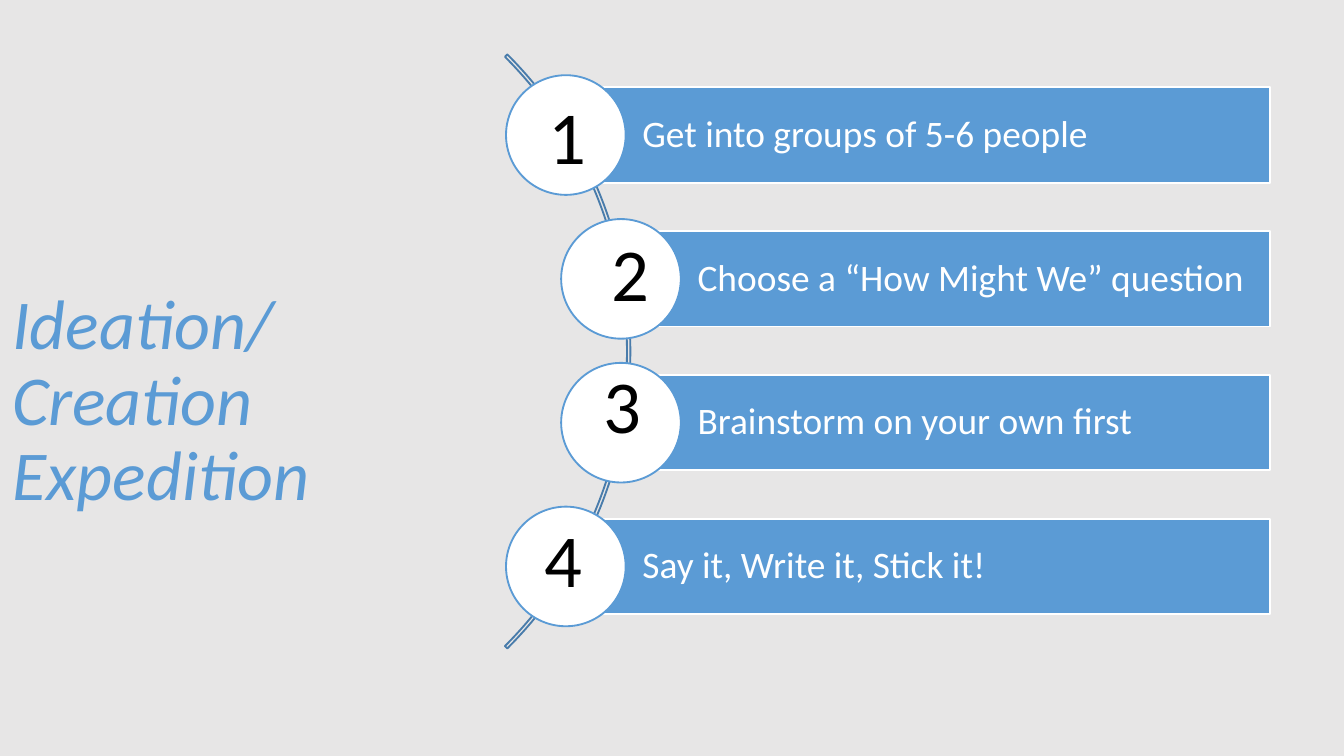
from pptx import Presentation
from pptx.dml.color import RGBColor
from pptx.enum.shapes import MSO_SHAPE as SHAPE
from pptx.enum.text import MSO_ANCHOR as ANCHOR, MSO_AUTO_SIZE as AUTO, PP_ALIGN as ALIGN
from pptx.util import Inches, Pt

COLORS = {"ground": "E7E6E6", "blue": "5B9BD5", "arc": "497CAB",
          "white": "FFFFFF", "black": "000000"}


def write(box, text, size, color, italic=False, anchor=ANCHOR.TOP,
          spacing=1.0, left=0.1, inset=0.05, wrap=True):
    frame = box.text_frame
    frame.auto_size = AUTO.NONE
    frame.word_wrap = wrap
    frame.vertical_anchor = anchor
    frame.margin_left, frame.margin_right = Inches(left), Inches(min(left, inset * 2))
    frame.margin_top = frame.margin_bottom = Inches(inset)
    paragraph = frame.paragraphs[0]
    paragraph.text = text
    paragraph.alignment = ALIGN.LEFT
    paragraph.line_spacing = spacing
    for run in paragraph.runs:
        run.font.name = "Calibri"
        run.font.size = Pt(size)
        run.font.italic = italic
        run.font.color.rgb = RGBColor.from_string(COLORS[color])


def draw(kind, left, top, width, height, fill, line):
    outline = slide.shapes.add_shape(
        kind, Inches(left), Inches(top), Inches(width), Inches(height))
    outline.shadow.inherit = False
    if fill:
        outline.fill.solid()
        outline.fill.fore_color.rgb = RGBColor.from_string(COLORS[fill])
    else:
        outline.fill.background()
    outline.line.color.rgb = RGBColor.from_string(COLORS[line])
    outline.line.width = Pt(1)
    return outline


deck = Presentation()
deck.slide_width = Inches(10)
deck.slide_height = deck.slide_width * 9 // 16
slide = deck.slides.add_slide(deck.slide_layouts[5])
slide.background.fill.solid()
slide.background.fill.fore_color.rgb = RGBColor.from_string(COLORS["ground"])

heading = slide.shapes.title
heading.left, heading.top = Inches(-0.01), Inches(2.1)
heading.width, heading.height = Inches(3.86), Inches(1.3)
write(heading, "Ideation/Creation\vExpedition", 37.5, "blue", italic=True, spacing=0.9)

arc = draw(SHAPE.BLOCK_ARC, -1.56, -0.51, 6.25, 6.25, None, "arc")
for index, setting in enumerate((189, 27, 0.004)):
    arc.adjustments[index] = setting

ROW_TOP, ROW_STEP, BAR_HEIGHT, BAR_RIGHT = 0.65, 1.07, 0.71, 9.45
CIRCLE = 0.89
steps = [
    ("Get into groups of 5-6 people", 4.21, 3.98, 0.62),
    ("Choose a “How Might We” question", 4.62, 4.45, 1.64),
    ("Brainstorm on your own first", 4.62, 4.39, 2.62),
    ("Say it, Write it, Stick it!", 4.21, 3.95, 3.77),
]
for row, (step, bar_left, number_left, number_top) in enumerate(steps):
    bar_top = ROW_TOP + row * ROW_STEP
    bar = draw(SHAPE.RECTANGLE, bar_left, bar_top, BAR_RIGHT - bar_left, BAR_HEIGHT,
               "blue", "white")
    write(bar, step, 20, "white", anchor=ANCHOR.MIDDLE, spacing=0.9, left=0.57, inset=0.06)
    draw(SHAPE.OVAL, bar_left - CIRCLE / 2, bar_top + (BAR_HEIGHT - CIRCLE) / 2,
         CIRCLE, CIRCLE, "white", "blue")
    number = slide.shapes.add_textbox(
        Inches(number_left), Inches(number_top), Inches(0.47), Inches(0.77))
    write(number, str(row + 1), 40, "black", wrap=False)

deck.save("out.pptx")
